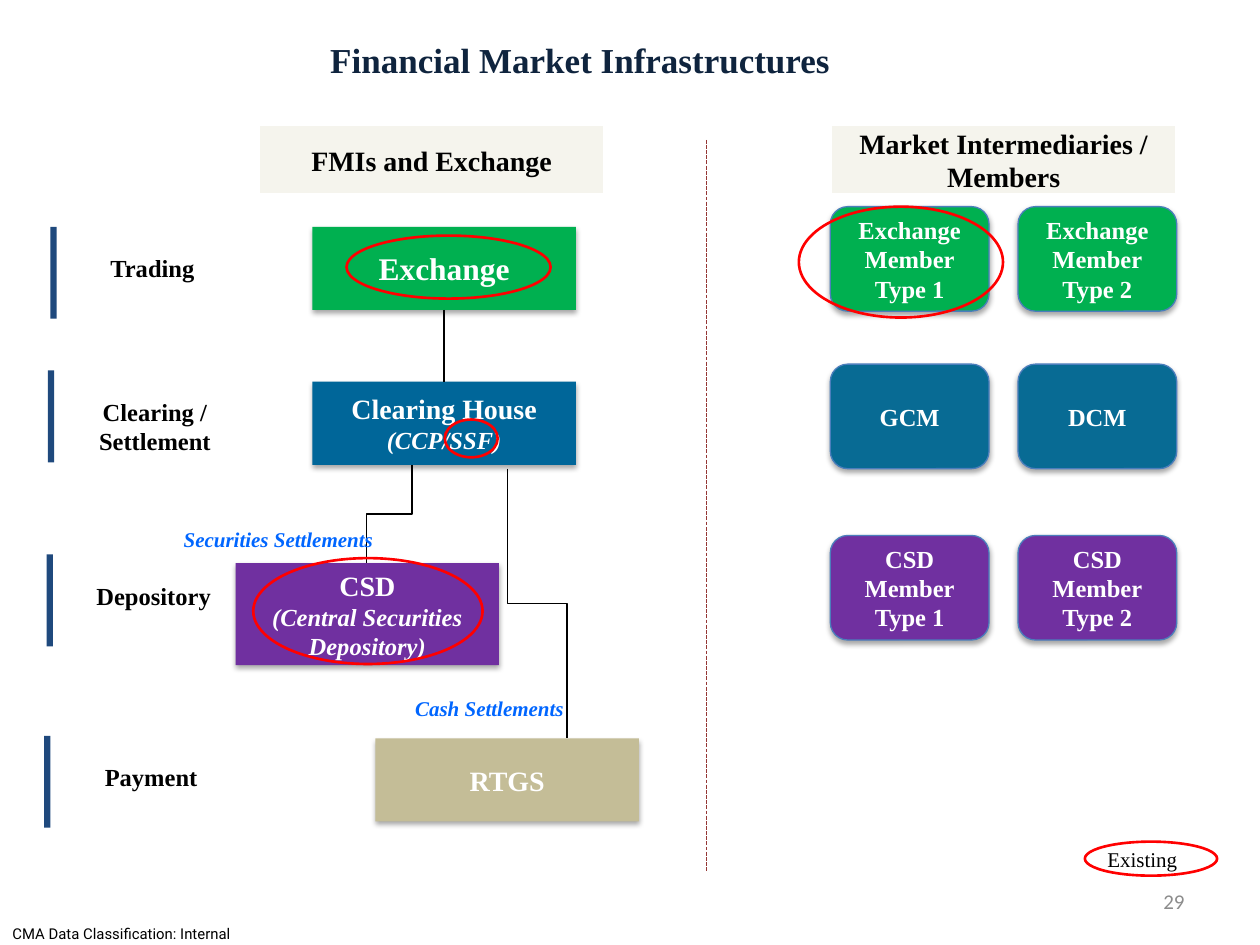
from lxml import etree
from pptx import Presentation
from pptx.dml.color import RGBColor
from pptx.enum.dml import MSO_LINE
from pptx.enum.shapes import MSO_CONNECTOR, MSO_SHAPE
from pptx.enum.text import MSO_ANCHOR, PP_ALIGN
from pptx.oxml import parse_xml
from pptx.oxml.ns import nsdecls, qn
from pptx.util import Inches, Pt

# The slide is a grid of 100 columns by 75 rows; every box is (left, top, width, height) in cells
COLS, ROWS = 100, 75
SERIF = "Times New Roman"
GREEN, BLUE, TEAL, PURPLE, SAND = "00B050", "006699", "086B94", "7030A0", "C4BD97"
WHITE, BLACK, RED, NAVY, CREAM = "FFFFFF", "000000", "FF0000", "1F497D", "F5F4ED"
SHADE = (
    f'<a:effectLst {nsdecls("a")}><a:outerShdw blurRad="39370" dist="22860" dir="5400000" '
    'rotWithShape="0"><a:srgbClr val="000000"><a:alpha val="35000"/></a:srgbClr>'
    "</a:outerShdw></a:effectLst>"
)


def cell(count):
    return Inches(count / 10)


def paint(target, code):
    """Colour a font, fill or line from a hex string."""
    if hasattr(target, "solid"):
        target.solid()
        target = target.fore_color
    else:
        target = target.color
    target.rgb = RGBColor.from_string(code)


def inside(box, left, top, width, height):
    """Turn a place relative to a box into a place on the slide."""
    return box[0] + left, box[1] + top, width, height


def write(shape, lines, color, bold=True, align=PP_ALIGN.CENTER,
          anchor=MSO_ANCHOR.MIDDLE, face=SERIF):
    """Fill a shape with lines of (text, size, italic)."""
    frame = shape.text_frame
    frame.word_wrap = True
    frame.vertical_anchor = anchor
    frame.text = "\n".join(line[0] for line in lines)
    for para, (_, size, italic) in zip(frame.paragraphs, lines):
        para.alignment = align
        for run in para.runs:
            font = run.font
            font.name, font.size = face, Pt(size)
            font.bold, font.italic = bold, italic
            paint(font, color)


def label(slide, box, lines, color=BLACK, **style):
    text = slide.shapes.add_textbox(*map(cell, box))
    write(text, lines, color, anchor=MSO_ANCHOR.TOP, **style)


def block(slide, box, fill=None, kind=MSO_SHAPE.RECTANGLE, edge=None, width=0.75, shade=False):
    shape = slide.shapes.add_shape(kind, *map(cell, box))
    if fill:
        paint(shape.fill, fill)
    else:
        shape.fill.background()
    if edge:
        paint(shape.line, edge)
        shape.line.width = Pt(width)
    else:
        shape.line.fill.background()
    shape.shadow.inherit = False
    if shade:
        props = shape._element.spPr
        props.replace(props.find(qn("a:effectLst")), parse_xml(SHADE))
    return shape


def ring(slide, box):
    block(slide, box, kind=MSO_SHAPE.OVAL, edge=RED, width=1.5)


def wire(slide, start, end, color=BLACK, kind=MSO_CONNECTOR.STRAIGHT):
    line = slide.shapes.add_connector(kind, *map(cell, (*start, *end)))
    paint(line.line, color)
    line.line.width = Pt(0.75)
    etree.SubElement(line._element.spPr, qn("a:effectLst"))
    return line


def elbow(slide, start, end):
    """Draw a down-across-down line: a turned elbow about its own middle."""
    (x, y), (x2, y2) = start, end
    mid, half, rise = (x + x2) / 2, (y2 - y) / 2, abs(x2 - x) / 2
    row = (y + y2) / 2
    side, turn = (half, 270) if x2 > x else (-half, 90)
    line = wire(slide, (mid + side, row - rise), (mid - side, row + rise),
                kind=MSO_CONNECTOR.ELBOW)
    line._element.spPr.find(qn("a:xfrm")).set("rot", str(turn * 60000))


def header(slide, box, text):
    shape = block(slide, box, CREAM, edge=WHITE, width=2)
    write(shape, [(text, 16, False)], BLACK)


def title(slide, box, text):
    shape = slide.shapes.title
    shape.left, shape.top, shape.width, shape.height = map(cell, box)
    write(shape, [(text, 20, False)], "0F243E")


def stages(slide, box):
    """Bars and names of the four stages down the left side."""
    rows = [
        (0.5, 0.1, 0, ["Trading"]),
        (0.3, 0.3, 11.4, ["Clearing /", "Settlement"]),
        (0.2, 0.2, 26, ["Depository"]),
        (0, 0, 40.4, ["Payment"]),
    ]
    for bar, left, top, names in rows:
        block(slide, inside(box, bar, top, 0.5, 7.3), NAVY)
        label(slide, inside(box, left, top + 1.6, 17, 1 + 2.35 * len(names)),
              [(name, 14, False) for name in names])


def flow(slide, box):
    """Market systems, the lines between them and the rings on those in use."""
    header(slide, inside(box, 1.8, 0, 27.5, 5.6), "FMIs and Exchange")
    parts = [
        (6.1, 8.1, 6.6, GREEN, [("Exchange", 18, False)]),
        (6.1, 20.4, 6.6, BLUE, [("Clearing House", 16, False), ("(CCP/SSF)", 14, True)]),
        (0, 34.8, 8.1, PURPLE, [("CSD", 16, False), ("(Central Securities Depository)", 14, True)]),
        (11.1, 48.7, 6.6, SAND, [("RTGS", 16, False)]),
    ]
    shapes = []
    for left, top, height, fill, lines in parts:
        shape = block(slide, inside(box, left, top, 20.9, height), fill, shade=True)
        shape.text_frame.margin_left = shape.text_frame.margin_right = cell(0.4)
        write(shape, lines, WHITE)
        shapes.append(shape)

    # Lines
    x, y = box[:2]
    trade = wire(slide, (x + 16.6, y + 14.7), (x + 16.6, y + 20.4))
    trade.begin_connect(shapes[0], 2)
    trade.end_connect(shapes[1], 0)
    elbow(slide, (x + 14, y + 27), (x + 10.4, y + 34.8))
    elbow(slide, (x + 21.6, y + 27.3), (x + 26.3, y + 48.7))

    # Names of the settlement lines
    for text, place in (("Securities Settlements", (-9.2, 31.4, 25.2, 3)),
                        ("Cash Settlements", (10.4, 44.8, 19.5, 3))):
        label(slide, inside(box, *place), [(text, 12, True)], "0066FF")

    for place in ((8.8, 8.8, 16.2, 5), (16.6, 23.4, 4.2, 3), (1.4, 34.4, 18.2, 8.4)):
        ring(slide, inside(box, *place))


def members(slide, box):
    """Header and a grid of members, two to a row."""
    header(slide, inside(box, 0, 0, 27.5, 5.6), "Market Intermediaries / Members")
    rows = [
        (6.5, GREEN, (["Exchange Member", "Type 1"], ["Exchange Member", "Type 2"])),
        (19, TEAL, (["GCM"], ["DCM"])),
        (32.6, PURPLE, (["CSD Member", "Type 1"], ["CSD Member", "Type 2"])),
    ]
    for top, fill, pair in rows:
        for col, names in enumerate(pair):
            shape = block(slide, inside(box, col * 14.9, top, 12.6, 8.3), fill,
                          MSO_SHAPE.ROUNDED_RECTANGLE, "4B7EBC", shade=True)
            write(shape, [(name, 14, False) for name in names], WHITE)
    ring(slide, inside(box, -2.5, 6.5, 16.2, 8.8))


def legend(slide, box):
    label(slide, inside(box, 0.8, -0.1, 10.6, 3), [("Existing", 12, False)],
          bold=False, align=PP_ALIGN.LEFT)
    ring(slide, box)


def footer(slide, box):
    """Class of the data at the left, page number at the right."""
    label(slide, inside(box, 0, 3.4, 100, 2.4), [("CMA Data Classification: Internal", 8.5, False)],
          bold=False, align=PP_ALIGN.LEFT, face="Roboto")
    page = slide.shapes.add_textbox(*map(cell, inside(box, 71.7, 0, 23.3, 4)))
    write(page, [("29", 12, False)], "8C8C8C", bold=False, align=PP_ALIGN.RIGHT, face="Calibri")


def main():
    deck = Presentation()
    deck.slide_width, deck.slide_height = cell(COLS), cell(ROWS)
    slide = deck.slides.add_slide(deck.slide_layouts[5])
    title(slide, (0.8, 2.1, 90.5, 5.3), "Financial Market Infrastructures")
    stages(slide, (3.5, 18, 17.5, 47.7))
    flow(slide, (18.7, 9.9, 32, 55.3))
    # Divider
    wire(slide, (56.1, 11.1), (56.1, 69.1), "953735").line.dash_style = MSO_LINE.SQUARE_DOT
    members(slide, (65.9, 9.9, 27.5, 40.9))
    legend(slide, (86.1, 66.8, 10.5, 2.7))
    footer(slide, (0, 69.5, 100, 5.5))
    deck.save("out.pptx")


if __name__ == "__main__":
    main()
